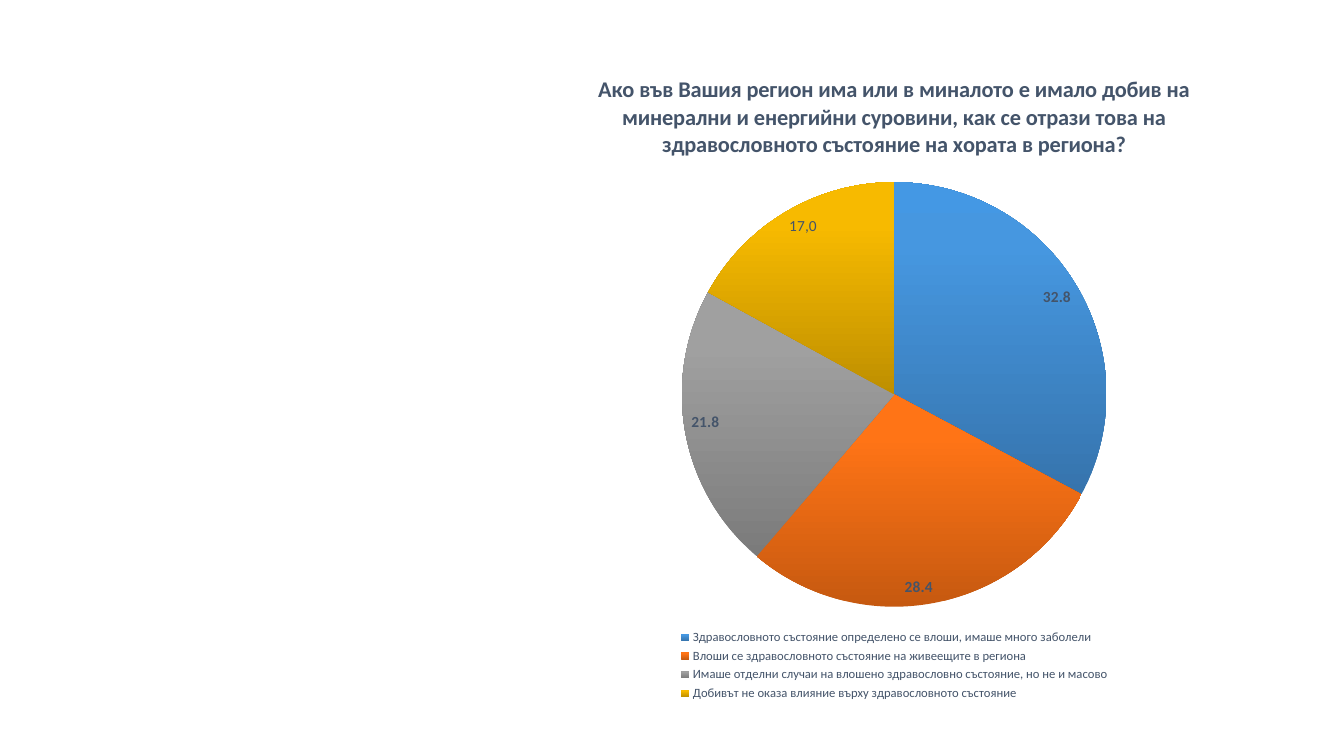
from copy import deepcopy

from lxml import etree
from pptx import Presentation
from pptx import util as u
from pptx.chart import data as chart_data
from pptx.dml import color
from pptx.enum import chart as ch

FONT = "Calibri"
COLORS = {
    "text": "44546A",
    "blue": ("3674AD", "4697E0", "4498E4"),
    "orange": ("C65910", "FF7416", "FF7517"),
    "grey": ("7B7B7B", "A0A0A0", "A1A1A1"),
    "yellow": ("BE8F00", "F7BA00", "F8BB00"),
}
STOPS = (0, 0.8, 1)
QUESTION = (
    "Ако във Вашия регион има или в миналото е имало добив на минерални и "
    "енергийни суровини, как се отрази това на здравословното състояние "
    "на хората в региона?"
)
# Answer, share in percent, slice colour
ANSWERS = [
    ("Здравословното състояние определено се влоши, имаше много заболели", 32.8, "blue"),
    ("Влоши се здравословното състояние на живеещите в региона", 28.4, "orange"),
    ("Имаше отделни случаи на влошено здравословно състояние, но не и масово", 21.8, "grey"),
    ("Добивът не оказа влияние върху здравословното състояние", 17, "yellow"),
]


def style(font, size, bold=False, fill="text"):
    font.name = FONT
    font.size = u.Pt(size)
    font.bold = bold
    font.color.rgb = color.RGBColor.from_string(COLORS[fill])


def write(frame, content, **look):
    run = frame.paragraphs[0].add_run()
    run.text = content
    style(run.font, **look)


def shade(fill, shades):
    """Fill a slice with a gradient that runs from its foot upwards."""
    fill.gradient()
    fill.gradient_angle = 90
    last = fill.gradient_stops[1]._gs
    last.addnext(deepcopy(last))
    for stop, position, rgb in zip(fill.gradient_stops, STOPS, shades):
        stop.position = position
        stop.color.rgb = color.RGBColor.from_string(rgb)


def place_plot(plot_area, **fractions):
    """Fix the inner plot area as fractions of the chart's box."""
    ns = plot_area.nsmap["c"]
    for old in plot_area.findall(f"{{{ns}}}layout"):
        plot_area.remove(old)
    layout = etree.Element(f"{{{ns}}}layout")
    manual = etree.SubElement(layout, f"{{{ns}}}manualLayout")
    settings = {"layoutTarget": "inner", "xMode": "edge", "yMode": "edge", **fractions}
    for tag, value in settings.items():
        etree.SubElement(manual, f"{{{ns}}}{tag}", val=str(value))
    plot_area.insert(0, layout)


def add_health_pie(slide, left, top, width, height):
    survey = chart_data.CategoryChartData(number_format="0.0")
    survey.categories = [answer for answer, _, _ in ANSWERS]
    survey.add_series("Series 1", [share for _, share, _ in ANSWERS])
    pie = slide.shapes.add_chart(
        ch.XL_CHART_TYPE.PIE, left, top, width, height, survey
    ).chart
    pie.font.name = FONT
    pie.font.size = u.Pt(10)

    # Question above the pie
    pie.has_title = True
    pie.chart_title.include_in_layout = False
    write(pie.chart_title.text_frame, QUESTION, size=16, bold=True)

    # Slices
    plot = pie.plots[0]
    plot.vary_by_categories = True
    slices = plot.series[0]
    for index, (_, _, name) in enumerate(ANSWERS):
        shade(slices.points[index].format.fill, COLORS[name])
    place_plot(pie._chartSpace.chart.plotArea, x=0.23, y=0.2, w=0.54, h=0.65)

    # Shares on the slices; the last one is typed with a comma
    shares = slices.data_labels
    shares.show_value = True
    shares.number_format = "0.0"
    shares.number_format_is_linked = False
    shares.position = ch.XL_LABEL_POSITION.INSIDE_END
    style(shares.font, size=11, bold=True)
    no_effect_share = slices.points[len(ANSWERS) - 1].data_label
    write(no_effect_share.text_frame, "17,0", size=11)
    no_effect_share.position = ch.XL_LABEL_POSITION.INSIDE_END

    # Answers below the pie
    pie.has_legend = True
    pie.legend.position = ch.XL_LEGEND_POSITION.BOTTOM
    pie.legend.include_in_layout = False
    style(pie.legend.font, size=9)


def main():
    deck = Presentation()
    deck.slide_width, deck.slide_height = u.Cm(33.87), u.Cm(19.05)
    slide = deck.slides.add_slide(deck.slide_layouts[6])
    add_health_pie(slide, u.Cm(12.5), u.Cm(1.3), u.Cm(20.07), u.Cm(16.46))
    deck.save("out.pptx")


if __name__ == "__main__":
    main()
